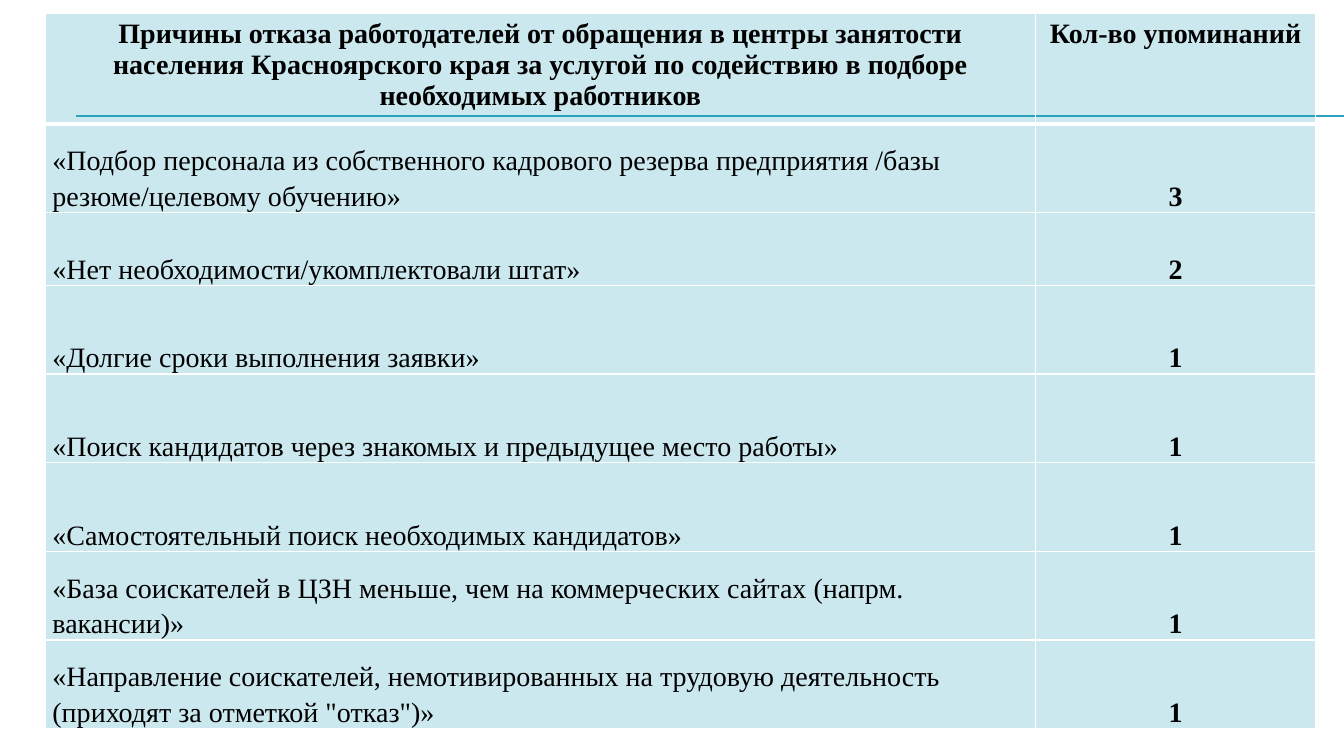
from dataclasses import dataclass

from lxml.etree import SubElement
from pptx import Presentation
from pptx.dml.color import RGBColor
from pptx.enum.text import MSO_ANCHOR, PP_ALIGN
from pptx.oxml import parse_xml
from pptx.oxml.ns import nsdecls, qn
from pptx.slide import Slide
from pptx.table import _Cell
from pptx.util import Inches, Pt

COLORS = {"accent": "2DA2BF", "border": "FFFFFF", "text": "000000"}
FONT = "Times New Roman"
FILL_ALPHA = 24000
SLIDE_WIDTH = 13.33
COLUMN_WIDTHS = (9.82, 2.78)
HEADER_HEIGHT = 1.1
HEADINGS = (
    "Причины отказа работодателей от обращения в центры занятости населения "
    "Красноярского края за услугой по содействию в подборе необходимых работников",
    "Кол-во упоминаний",
)


@dataclass(frozen=True)
class Reason:
    text: str
    mentions: int
    height: float = 0.88


@dataclass(frozen=True)
class Rule:
    top: float
    left: float = 0.75


REASONS = (
    Reason("«Подбор персонала из собственного кадрового резерва предприятия /базы резюме/целевому обучению»", 3),
    Reason("«Нет необходимости/укомплектовали штат»", 2, height=0.72),
    Reason("«Долгие сроки выполнения заявки»", 1),
    Reason("«Поиск кандидатов через знакомых и предыдущее место работы»", 1),
    Reason("«Самостоятельный поиск необходимых кандидатов»", 1),
    Reason("«База соискателей в ЦЗН меньше, чем на коммерческих сайтах (напрм. вакансии)»", 1),
    Reason('«Направление соискателей, немотивированных на трудовую деятельность (приходят за отметкой "отказ")»', 1),
)
RULES = (Rule(1.15), Rule(1.16))


def write_text(cell: _Cell, text: str, *, bold: bool = False,
               align: PP_ALIGN = PP_ALIGN.LEFT, spacing: float = 1.0) -> None:
    para = cell.text_frame.paragraphs[0]
    para.alignment = align
    para.line_spacing = spacing
    span = para.add_run()
    span.text = text
    span.font.name = FONT
    span.font.size = Pt(20)
    span.font.bold = bold
    span.font.color.rgb = RGBColor.from_string(COLORS["text"])


def style_cell(cell: _Cell, top: float = 1, bottom: float = 1) -> None:
    cell.fill.solid()
    cell.fill.fore_color.rgb = RGBColor.from_string(COLORS["accent"])
    properties = cell._tc.get_or_add_tcPr()
    color = properties.find(f"{qn('a:solidFill')}/{qn('a:srgbClr')}")
    SubElement(color, qn("a:alpha"), val=str(FILL_ALPHA))
    borders = {"lnL": 1, "lnR": 1, "lnT": top, "lnB": bottom}
    for index, (side, width) in enumerate(borders.items()):
        properties.insert(index, parse_xml(
            f'<a:{side} {nsdecls("a")} w="{Pt(width)}"><a:solidFill>'
            f'<a:srgbClr val="{COLORS["border"]}"/></a:solidFill></a:{side}>'
        ))


def draw_rule(page: Slide, rule: Rule) -> None:
    line = page.shapes.add_connector(
        1, Inches(rule.left), Inches(rule.top), Inches(SLIDE_WIDTH), Inches(rule.top)
    )
    line.line.color.rgb = RGBColor.from_string(COLORS["accent"])
    line.line.width = Pt(0.75)
    SubElement(line._element.spPr, qn("a:effectLst"))


def draw_table(page: Slide) -> None:
    heights = [HEADER_HEIGHT, *(reason.height for reason in REASONS)]
    table = page.shapes.add_table(
        len(heights), len(COLUMN_WIDTHS), Inches(0.45), Inches(0.13),
        Inches(sum(COLUMN_WIDTHS)), Inches(sum(heights)),
    ).table
    table.horz_banding = False
    for column, width in zip(table.columns, COLUMN_WIDTHS):
        column.width = Inches(width)
    for row, height in zip(table.rows, heights):
        row.height = Inches(height)
    for cell, heading in zip(table.rows[0].cells, HEADINGS):
        style_cell(cell, bottom=3)
        write_text(cell, heading, bold=True, align=PP_ALIGN.CENTER)
    for index, reason in enumerate(REASONS, start=1):
        label, count = table.rows[index].cells
        for cell in (label, count):
            style_cell(cell, top=3 if index == 1 else 1)
            cell.vertical_anchor = MSO_ANCHOR.BOTTOM
            cell.margin_left = cell.margin_right = Inches(0.07)
            cell.margin_top = cell.margin_bottom = 0
        write_text(label, reason.text, spacing=1.15)
        write_text(count, str(reason.mentions), bold=True, align=PP_ALIGN.CENTER, spacing=1.15)


def main() -> None:
    deck = Presentation()
    deck.slide_width = Inches(SLIDE_WIDTH)
    deck.slide_height = Inches(7.5)
    page = deck.slides.add_slide(deck.slide_layouts[6])
    for rule in RULES:
        draw_rule(page, rule)
    draw_table(page)
    deck.save("out.pptx")


if __name__ == "__main__":
    main()
